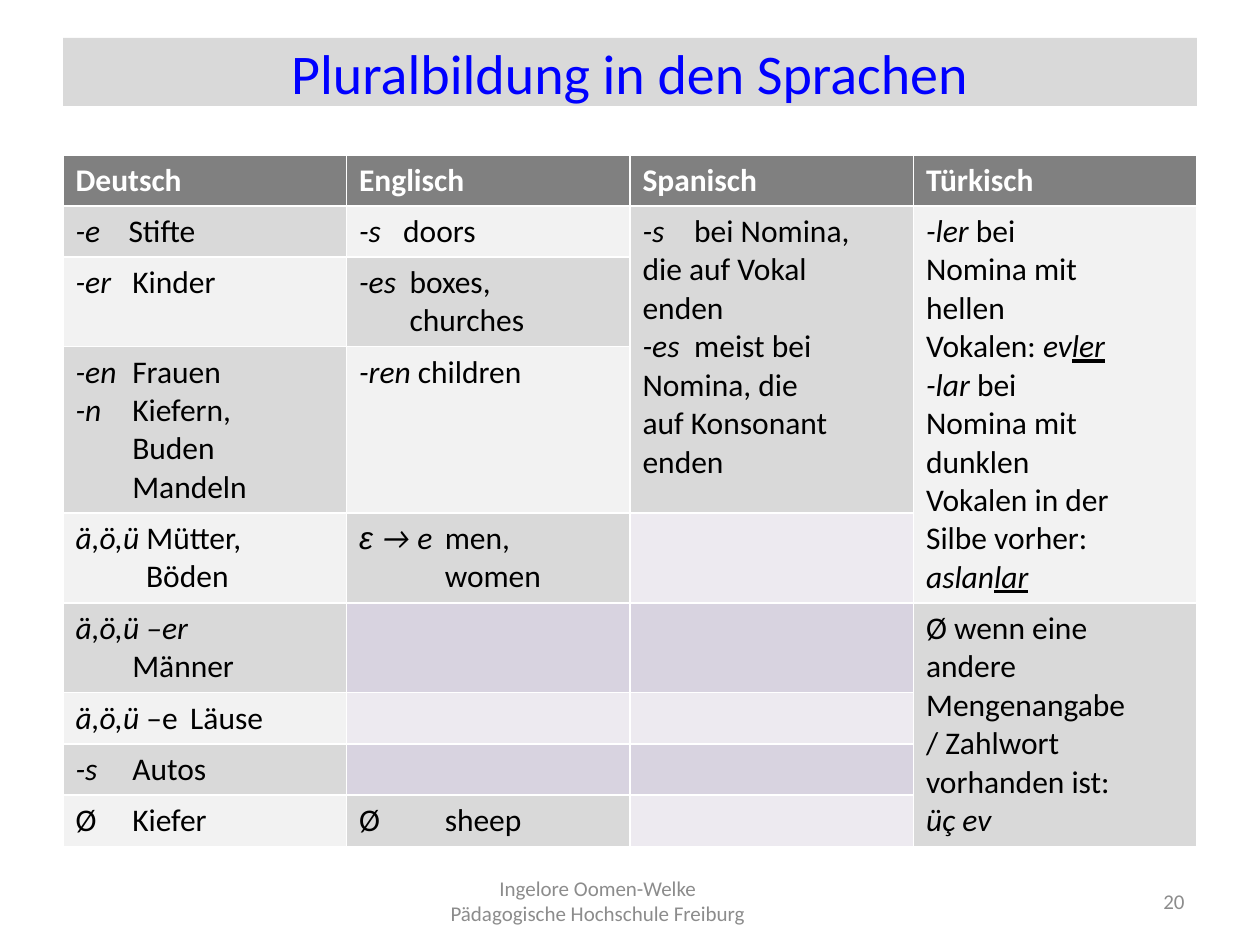
from pptx import Presentation
from pptx.dml.color import RGBColor
from pptx.enum.text import MSO_ANCHOR as Anchor, MSO_AUTO_SIZE as Auto, PP_ALIGN as Align
from pptx.oxml.ns import qn
from pptx.util import Inches, Pt
from lxml.etree import SubElement

# Content: *italic*, _underlined_; a tab leads to the word column of the cell
TITLE = "Pluralbildung in den Sprachen"
HEADS = ["Deutsch", "Englisch", "Spanisch", "Türkisch"]
DARK, LIGHT = "D9D9D9", "F2F2F2"
# column, row, rows spanned, fill, tab stop, lines
CELLS = [
    (0, 1, 1, DARK, 0.42, ["*-e*\tStifte"]),
    (0, 2, 1, LIGHT, 0.45, ["*-er*\tKinder"]),
    (0, 3, 1, DARK, 0.45, ["*-en*\tFrauen", "*-n*\tKiefern,", "\tBuden", "\tMandeln"]),
    (0, 4, 1, LIGHT, 0.56, ["*ä,ö,ü* Mütter,", "\tBöden"]),
    (0, 5, 1, DARK, 0.45, ["*ä,ö,ü –er*", "\tMänner"]),
    (0, 6, 1, LIGHT, 0.91, ["*ä,ö,ü* –e\tLäuse"]),
    (0, 7, 1, DARK, 0.45, ["*-s*\tAutos"]),
    (0, 8, 1, LIGHT, 0.45, ["Ø\tKiefer"]),
    (1, 1, 1, LIGHT, 0.35, ["*-s*\tdoors"]),
    (1, 2, 1, DARK, 0.4, ["*-es*\tboxes,", "\tchurches"]),
    (1, 3, 1, LIGHT, 0.4, ["*-ren* children"]),
    (1, 4, 1, DARK, 0.68, ["*ε **→ e*\tmen,", "\twomen"]),
    (1, 8, 1, DARK, 0.68, ["Ø\tsheep"]),
    (2, 1, 3, DARK, 0.41, ["*-s*\tbei Nomina,", "die auf Vokal", "enden", "*-es*\tmeist bei",
                           "Nomina, die", "auf Konsonant", "enden"]),
    (3, 1, 4, LIGHT, 0.4, ["*-ler* bei", "Nomina mit", "hellen", "Vokalen: *ev_ler_*",
                           "*-lar* bei", "Nomina mit", "dunklen", "Vokalen in der",
                           "Silbe vorher: *aslan_lar_*"]),
    (3, 5, 4, DARK, 0.4, ["Ø wenn eine", "andere", "Mengenangabe", "/ Zahlwort",
                          "vorhanden ist:", "*üç ev*"]),
]
BANDS = ["EDEAF0", "D8D3E0"]            # empty cells, even and odd rows
LINES = [1, 1, 2, 4, 2, 2, 1, 1, 1]     # text lines that each row holds
LEFT, WIDE = 0.5, 9
BODY = {"name": "Calibri", "size": Pt(18), "bold": False}
HEAD = {**BODY, "bold": True}
FOOT = {"name": "Calibri", "size": Pt(12)}


def rgb(code):
    return RGBColor.from_string(code)


def paint(part, code):
    part.fill.solid()
    part.fill.fore_color.rgb = rgb(code)


def add_run(para, text, look, color):
    run = para.add_run()
    run.text = text
    for key, val in look.items():
        setattr(run.font, key, val)
    run.font.color.rgb = rgb(color)


def add_rich(para, text):
    for i, part in enumerate(text.split("*")):
        for j, bit in enumerate(part.split("_")):
            if bit:
                look = {**BODY, "italic": i % 2 == 1, "underline": j % 2 == 1}
                if bit.startswith("ε"):
                    look["name"] = "Arial"
                add_run(para, bit, look, "000000")


def add_lines(frame, lines, stop):
    for n, line in enumerate(lines):
        para = frame.add_paragraph() if n else frame.paragraphs[0]
        props = para._p.get_or_add_pPr()
        if line.startswith("\t"):
            props.set("marL", str(Inches(stop)))
            props.set("indent", "0")
        elif "\t" in line:
            tabs = SubElement(props, qn("a:tabLst"))
            SubElement(tabs, qn("a:tab"), pos=str(Inches(stop)), algn="l")
        add_rich(para, line.lstrip("\t"))


def add_note(slide, left, wide, lines, align):
    box = slide.shapes.add_textbox(Inches(left), Inches(6.95), Inches(wide), Inches(0.4))
    frame = box.text_frame
    frame.word_wrap = True
    frame.vertical_anchor = Anchor.MIDDLE
    for n, (text, inset) in enumerate(lines):
        para = frame.add_paragraph() if n else frame.paragraphs[0]
        para.alignment = align
        if inset:
            para._p.get_or_add_pPr().set("marR", str(Inches(inset)))
        add_run(para, text, FOOT, "8C8C8C")


def main():
    deck = Presentation()
    deck.slide_width, deck.slide_height = Inches(10), Inches(7.5)
    slide = deck.slides.add_slide(deck.slide_layouts[5])

    # Title bar
    title = slide.shapes.title
    title.left, title.top = Inches(LEFT), Inches(0.3)
    title.width, title.height = Inches(WIDE), Inches(0.54)
    paint(title, DARK)
    frame = title.text_frame
    frame.auto_size = Auto.NONE
    frame.vertical_anchor = Anchor.MIDDLE
    frame.paragraphs[0].alignment = Align.CENTER
    add_run(frame.paragraphs[0], TITLE, {"name": "Calibri", "size": Pt(32)}, "0000FF")

    # Table grid: row heights follow the line counts
    highs = [0.1 + 0.305 * n for n in LINES]
    table = slide.shapes.add_table(len(LINES), len(HEADS), Inches(LEFT), Inches(1.23),
                                   Inches(WIDE), Inches(sum(highs))).table
    for row, high in zip(table.rows, highs):
        row.height = Inches(high)
    for c, head in enumerate(HEADS):
        paint(table.cell(0, c), "808080")
        add_run(table.cell(0, c).text_frame.paragraphs[0], head, HEAD, "FFFFFF")
        for r in range(1, len(LINES)):
            paint(table.cell(r, c), BANDS[r % 2])

    # Plural rules
    for c, r, span, fill, stop, lines in CELLS:
        cell = table.cell(r, c)
        if span > 1:
            cell.merge(table.cell(r + span - 1, c))
        paint(cell, fill)
        add_lines(cell.text_frame, lines, stop)

    # Footer and page number
    add_note(slide, 3.42, 3.17, [("Ingelore Oomen-Welke", 0.52),
                                 ("Pädagogische Hochschule Freiburg", 0)], Align.CENTER)
    add_note(slide, 7.17, 2.33, [("20", 0)], Align.RIGHT)
    deck.save("out.pptx")


if __name__ == "__main__":
    main()
